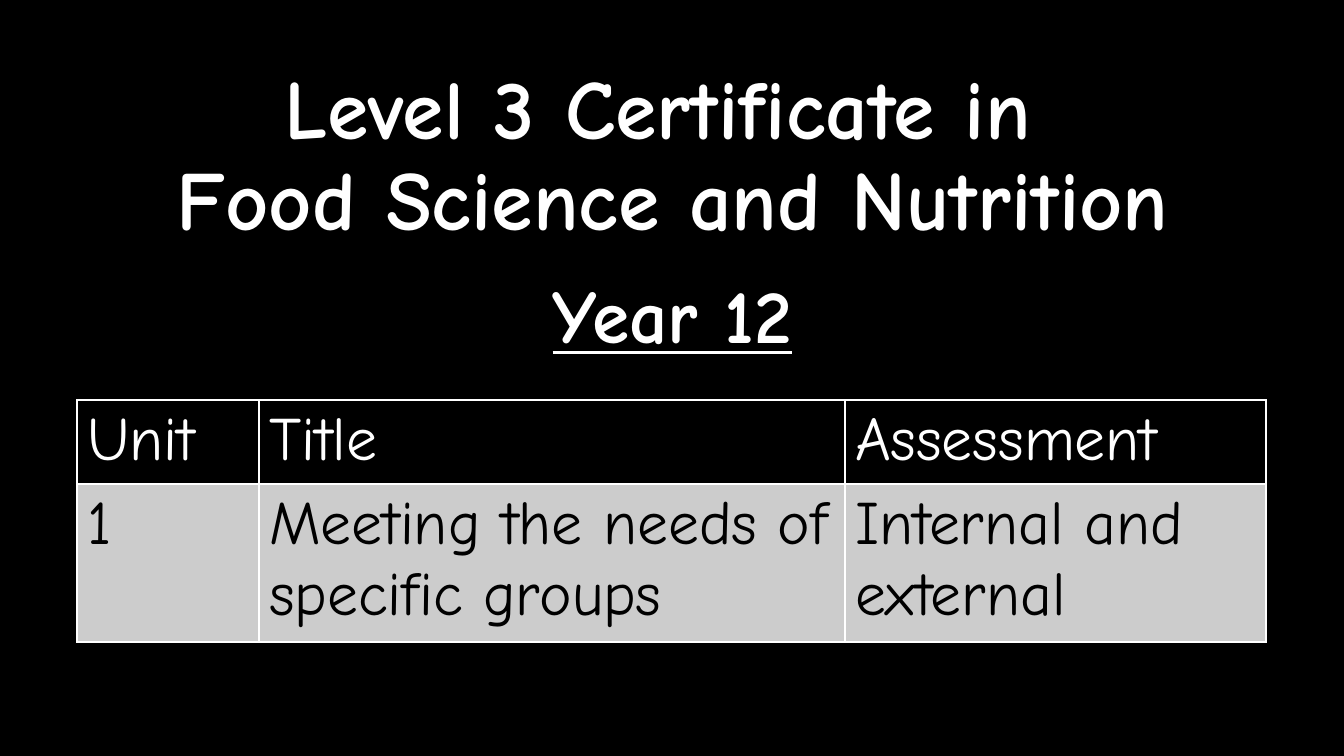
from lxml import etree
from pptx import Presentation
from pptx.dml.color import RGBColor
from pptx.enum.text import MSO_ANCHOR, PP_ALIGN
from pptx.oxml.ns import qn
from pptx.util import Pt

CENTER = PP_ALIGN.CENTER
TOP, MIDDLE = MSO_ANCHOR.TOP, MSO_ANCHOR.MIDDLE
EMU_PER_PX = 914400 / 100.8
COLORS = {"black": "000000", "white": "FFFFFF", "grey": "CCCCCC"}


def px(length):
    return round(length * EMU_PER_PX)


class CourseSlide:
    font = "Comic Neue"

    def __init__(self, prs):
        self.slide = prs.slides.add_slide(prs.slide_layouts[6])
        self.fill(self.slide.background.fill, "black")

    def fill(self, fill, color):
        fill.solid()
        fill.fore_color.rgb = RGBColor.from_string(COLORS[color])

    def format_text(self, paragraph, size, color, bold=False, underline=False):
        for run in paragraph.runs:
            run.font.name = self.font
            run.font.size = Pt(size)
            run.font.bold = bold
            run.font.underline = underline
            run.font.color.rgb = RGBColor.from_string(COLORS[color])

    def heading(self, text, box, size, anchor, space_before=0, underline=False):
        frame = self.slide.shapes.add_textbox(*map(px, box)).text_frame
        frame.word_wrap = True
        frame.vertical_anchor = anchor
        paragraph = frame.paragraphs[0]
        paragraph.text = text
        paragraph.alignment = CENTER
        paragraph.line_spacing = 0.9
        paragraph.space_before = Pt(space_before)
        self.format_text(paragraph, size, "white", True, underline)

    def cell_borders(self, cell, color, width):
        properties = cell._tc.get_or_add_tcPr()
        for side in ("a:lnL", "a:lnR", "a:lnT", "a:lnB"):
            line = etree.SubElement(properties, qn(side), w=str(Pt(width)))
            solid = etree.SubElement(line, qn("a:solidFill"))
            etree.SubElement(solid, qn("a:srgbClr"), val=COLORS[color])

    def table(self, rows, left, top, widths, heights, row_colors, size):
        table = self.slide.shapes.add_table(
            len(rows), len(widths), px(left), px(top),
            px(sum(widths)), px(sum(heights))).table
        table.horz_banding = False
        for column, width in zip(table.columns, widths):
            column.width = px(width)
        for row, height, texts, (back, ink) in zip(
                table.rows, heights, rows, row_colors):
            row.height = px(height)
            for cell, text in zip(row.cells, texts):
                cell.text = text
                self.format_text(cell.text_frame.paragraphs[0], size, ink)
                self.cell_borders(cell, "white", 1)
                self.fill(cell.fill, back)


def main():
    prs = Presentation()
    prs.slide_width, prs.slide_height = px(1344), px(756)
    course = CourseSlide(prs)

    # Course name and year
    course.heading("Level 3 Certificate in \vFood Science and Nutrition",
                   (93, 85, 1159, 146), 60, MIDDLE)
    course.heading("Year 12", (93, 273, 1159, 100), 54, TOP,
                   space_before=10, underline=True)

    # Units and how they are assessed
    units = [
        ("Unit", "Title", "Assessment"),
        ("1", "Meeting the needs of specific groups", "Internal and external"),
    ]
    course.table(units, 77, 400, (182, 586, 421), (81, 152),
                 (("black", "white"), ("grey", "black")), 44)

    prs.save("out.pptx")


if __name__ == "__main__":
    main()
